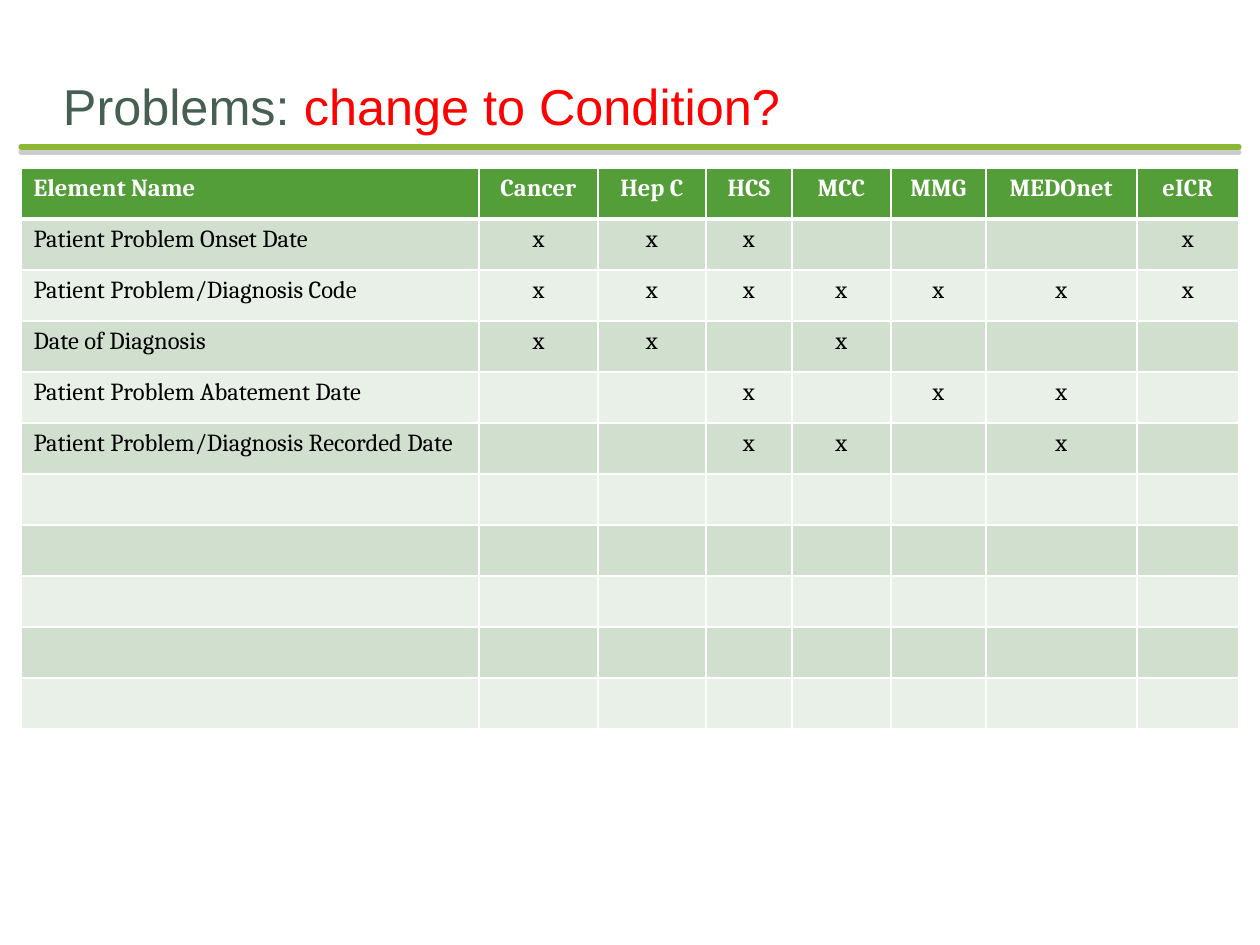
from dataclasses import dataclass

from lxml.etree import SubElement
from pptx import Presentation
from pptx.dml.color import RGBColor
from pptx.enum.shapes import MSO_CONNECTOR
from pptx.enum.text import MSO_ANCHOR, PP_ALIGN
from pptx.oxml.ns import qn
from pptx.util import Emu, Pt

EMU_PER_PX = 914400 / 126
SLIDE_WIDTH, SLIDE_HEIGHT = 1260, 945
COLUMN_WIDTHS = [458, 119, 108, 86, 99, 95, 151, 102]
ROW_HEIGHT = 51
BLANK_ROWS = 5
SOURCES = ["Cancer", "Hep C", "HCS", "MCC", "MMG", "MEDOnet", "eICR"]
ELEMENTS = {
    "Patient Problem Onset Date": ["Cancer", "Hep C", "HCS", "eICR"],
    "Patient Problem/Diagnosis Code": SOURCES,
    "Date of Diagnosis": ["Cancer", "Hep C", "MCC"],
    "Patient Problem Abatement Date": ["HCS", "MMG", "MEDOnet"],
    "Patient Problem/Diagnosis Recorded Date": ["HCS", "MCC", "MEDOnet"],
}


@dataclass(frozen=True)
class Theme:
    title_font: str = "Arial"
    table_font: str = "Cambria"
    title_size: float = 28.8
    table_size: int = 14
    title: str = "455F51"
    question: str = "FF0000"
    rule: str = "8AB833"
    shadow: str = "808080"
    header: str = "549E39"
    bands: tuple = ("D1DFCE", "E9F0E8")
    grid: str = "FFFFFF"
    header_text: str = "FFFFFF"
    body_text: str = "000000"


def px(length):
    return Emu(round(length * EMU_PER_PX))


class SlideBuilder:
    """Draws styled elements on the current slide."""

    def __init__(self, slide, theme):
        self.slide = slide
        self.theme = theme

    def style(self, run, font, size, color, bold=False):
        run.font.name = font
        run.font.size = Pt(size)
        run.font.bold = bold
        run.font.color.rgb = RGBColor.from_string(color)

    def title(self, parts, left, top, width, height):
        frame = self.slide.shapes.add_textbox(px(left), px(top), px(width), px(height)).text_frame
        frame.word_wrap = True
        frame.vertical_anchor = MSO_ANCHOR.BOTTOM
        frame.margin_left = frame.margin_right = frame.margin_bottom = 0
        for wording, color in parts:
            run = frame.paragraphs[0].add_run()
            run.text = wording
            self.style(run, self.theme.title_font, self.theme.title_size, color)

    def rule(self, left, right, y):
        rule = self.slide.shapes.add_connector(
            MSO_CONNECTOR.STRAIGHT, px(left), px(y), px(right), px(y)
        )
        rule.line.color.rgb = RGBColor.from_string(self.theme.rule)
        rule.line.width = Pt(3)
        rule.line._get_or_add_ln().set("cap", "rnd")
        effects = SubElement(rule._element.spPr, qn("a:effectLst"))
        shadow = SubElement(
            effects, qn("a:outerShdw"), blurRad="0", dist=str(Pt(3)), dir="5400000", rotWithShape="0"
        )
        tint = SubElement(shadow, qn("a:srgbClr"), val=self.theme.shadow)
        SubElement(tint, qn("a:alpha"), val="40000")

    def borders(self, cell, top=1, bottom=1):
        properties = cell._tc.get_or_add_tcPr()
        for side, width in (("L", 1), ("R", 1), ("T", top), ("B", bottom)):
            edge = SubElement(properties, qn(f"a:ln{side}"), w=str(Pt(width)))
            fill = SubElement(edge, qn("a:solidFill"))
            SubElement(fill, qn("a:srgbClr"), val=self.theme.grid)

    def cell(self, cell, wording, row, column):
        header = row == 0
        self.borders(cell, top=3 if row == 1 else 1, bottom=3 if header else 1)
        cell.fill.solid()
        fill = self.theme.header if header else self.theme.bands[(row - 1) % 2]
        cell.fill.fore_color.rgb = RGBColor.from_string(fill)
        if not wording:
            return
        paragraph = cell.text_frame.paragraphs[0]
        paragraph.text = wording
        paragraph.alignment = PP_ALIGN.CENTER if column else PP_ALIGN.LEFT
        color = self.theme.header_text if header else self.theme.body_text
        self.style(paragraph.runs[0], self.theme.table_font, self.theme.table_size, color, header)

    def table(self, rows, left, top):
        table = self.slide.shapes.add_table(
            len(rows), len(COLUMN_WIDTHS), px(left), px(top),
            px(sum(COLUMN_WIDTHS)), px(ROW_HEIGHT * len(rows)),
        ).table
        for column, width in zip(table.columns, COLUMN_WIDTHS):
            column.width = px(width)
        for row, wordings in enumerate(rows):
            table.rows[row].height = px(ROW_HEIGHT)
            for column, wording in enumerate(wordings):
                self.cell(table.cell(row, column), wording, row, column)


def main():
    presentation = Presentation()
    presentation.slide_width, presentation.slide_height = px(SLIDE_WIDTH), px(SLIDE_HEIGHT)
    theme = Theme()
    slide = presentation.slides.add_slide(presentation.slide_layouts[6])
    builder = SlideBuilder(slide, theme)

    builder.rule(21, 1239, 147)
    builder.title(
        [("Problems: ", theme.title), ("change to Condition?", theme.question)], 63, 63, 1134, 73
    )
    rows = [["Element Name", *SOURCES]]
    for element, users in ELEMENTS.items():
        rows.append([element, *("x" if source in users else "" for source in SOURCES)])
    rows += [[""] * len(COLUMN_WIDTHS)] * BLANK_ROWS
    builder.table(rows, 21, 168)

    presentation.save("out.pptx")


if __name__ == "__main__":
    main()
